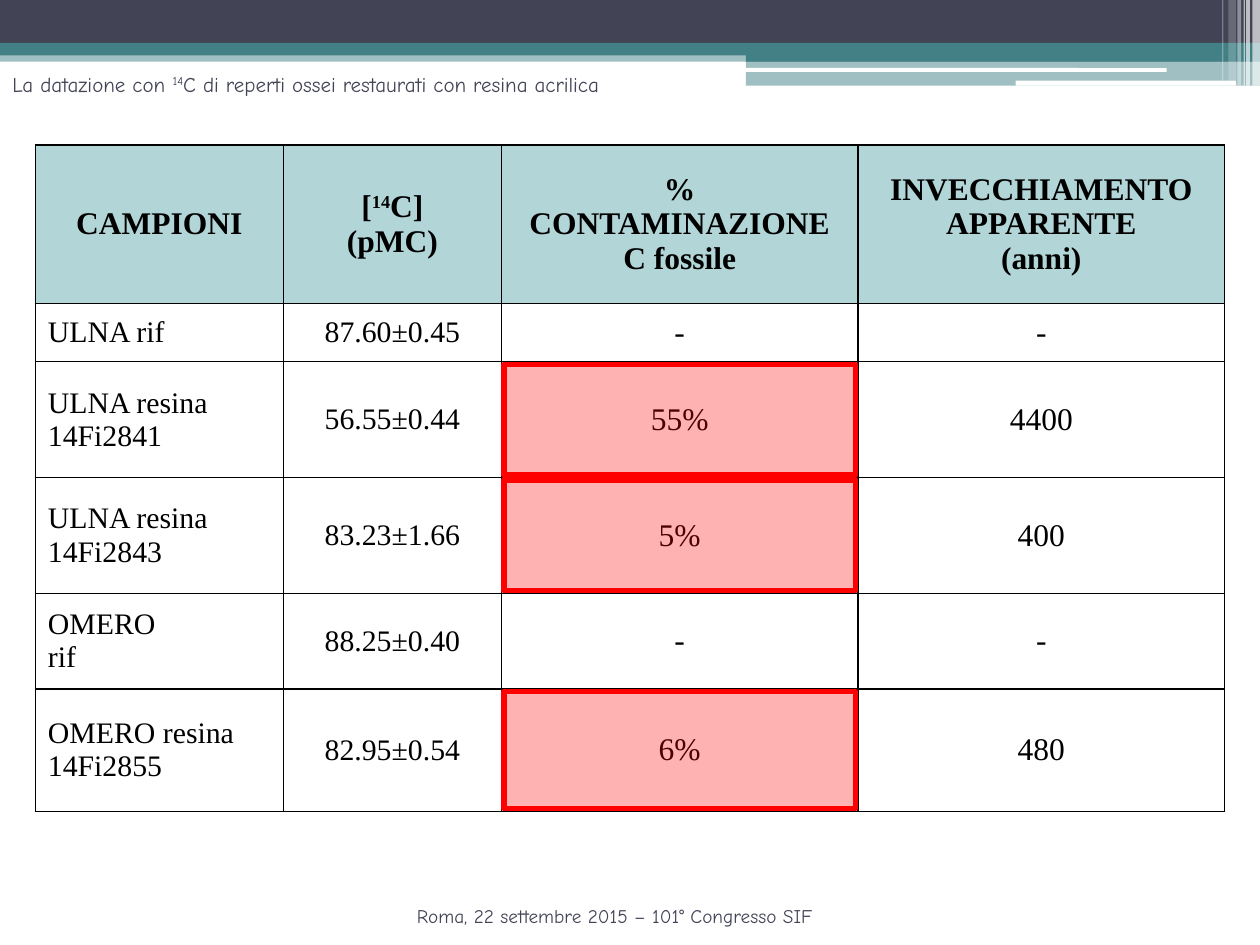
from lxml import etree
from pptx import Presentation
from pptx.dml.color import RGBColor
from pptx.enum.shapes import MSO_SHAPE as Shape
from pptx.enum.text import MSO_ANCHOR as Anchor, PP_ALIGN as Align
from pptx.oxml.ns import qn
from pptx.util import Inches, Pt

COLORS = {"slate": "424456", "teal": "438086", "header": "83BCC1",
          "white": "FFFFFF", "black": "000000", "red": "FF0000"}

# Banner parts: left, top, width, height, colour, opacity in percent
BANDS = [
    (0, 0.4, 10, 0.09, "teal", 50),
    (0, 0, 10, 0.34, "slate", 100),
    (0, 0.34, 10, 0.1, "teal", 100),
    (5.92, 0.39, 4.08, 0.1, "teal", 100),
    (5.92, 0.48, 4.08, 0.2, "teal", 50),
]
PILLS = [(5.91, 0.54, 3.35, 0.03), (8.06, 0.64, 1.75, 0.04)]
# Vertical stripes: left, width, height, opacity
STRIPES = [
    (9.94, 0.06, 0.68, 65), (9.89, 0.03, 0.68, 65), (9.87, 0.01, 0.68, 60),
    (9.82, 0.03, 0.68, 40), (9.75, 0.06, 0.64, 20), (9.7, 0.01, 0.64, 30),
]

# In all texts, ^ encloses a superscript and a line break starts a paragraph
TITLE = "La datazione con ^14^C di reperti ossei restaurati con resina acrilica"
FOOTER = "Roma, 22 settembre 2015 – 101° Congresso SIF"
ROWS = [
    ["CAMPIONI", "[^14^C]\n(pMC)", "% CONTAMINAZIONE\nC fossile",
     "INVECCHIAMENTO APPARENTE\n(anni)"],
    ["ULNA rif", "87.60±0.45", "-", "-"],
    ["ULNA resina\n14Fi2841", "56.55±0.44", "55%", "4400"],
    ["ULNA resina\n14Fi2843", "83.23±1.66", "5%", "400"],
    ["OMERO\nrif", "88.25±0.40", "-", "-"],
    ["OMERO resina\n14Fi2855", "82.95±0.54", "6%", "480"],
]
TABLE_LEFT, TABLE_TOP = 0.28, 1.15
COL_WIDTHS = [1.97, 1.73, 2.83, 2.91]
ROW_HEIGHTS = [1.26, 0.46, 0.92, 0.92, 0.76, 0.97]
MARKED_COL, MARKED_ROWS = 2, [2, 3, 5]
MARK_INSET = 0.02


def rgb(name):
    return RGBColor.from_string(COLORS[name])


def paint(fill, color, opacity=100):
    fill.solid()
    fill.fore_color.rgb = rgb(color)
    if opacity < 100:
        tag = fill._xPr.find(qn("a:solidFill")).find(qn("a:srgbClr"))
        etree.SubElement(tag, qn("a:alpha"), val=str(opacity * 1000))


def add_block(page, kind, left, top, width, height, color, opacity=100):
    block = page.shapes.add_shape(kind, Inches(left), Inches(top),
                                  Inches(width), Inches(height))
    block.shadow.inherit = False
    paint(block.fill, color, opacity)
    block.line.fill.background()
    return block


def write(frame, text, font, size, color, bold=False, align=Align.LEFT):
    for number, line in enumerate(text.split("\n")):
        para = frame.paragraphs[0] if number == 0 else frame.add_paragraph()
        para.alignment = align
        for part, piece in enumerate(line.split("^")):
            span = para.add_run()
            span.text = piece
            span.font.name, span.font.size = font, Pt(size)
            span.font.bold = bold
            span.font.color.rgb = rgb(color)
            if part % 2:
                span.font._element.set("baseline", "30000")


def add_text(page, left, top, width, height, text, size):
    box = page.shapes.add_textbox(Inches(left), Inches(top),
                                  Inches(width), Inches(height))
    box.text_frame.word_wrap = True
    box.text_frame.vertical_anchor = Anchor.MIDDLE
    write(box.text_frame, text, "Comic Neue", size, "slate")


def add_borders(cell):
    props = cell._tc.get_or_add_tcPr()
    for index, side in enumerate(("a:lnL", "a:lnR", "a:lnT", "a:lnB")):
        line = etree.Element(qn(side), w=str(Pt(1)))
        solid = etree.SubElement(line, qn("a:solidFill"))
        etree.SubElement(solid, qn("a:srgbClr"), val=COLORS["black"])
        props.insert(index, line)


def add_results(page):
    table = page.shapes.add_table(
        len(ROWS), len(COL_WIDTHS), Inches(TABLE_LEFT), Inches(TABLE_TOP),
        Inches(sum(COL_WIDTHS)), Inches(sum(ROW_HEIGHTS))).table
    table.horz_banding = False
    for column, width in zip(table.columns, COL_WIDTHS):
        column.width = Inches(width)
    for row, height in zip(table.rows, ROW_HEIGHTS):
        row.height = Inches(height)
    for r, texts in enumerate(ROWS):
        for c, text in enumerate(texts):
            cell = table.cell(r, c)
            cell.vertical_anchor = Anchor.MIDDLE
            header = r == 0
            if header:
                paint(cell.fill, "header", 62)
            elif c == 0:
                paint(cell.fill, "white")
            else:
                cell.fill.background()
            size = 18 if header or c >= 2 else 17
            align = Align.CENTER if header or c else Align.LEFT
            write(cell.text_frame, text, "Times New Roman", size, "black",
                  header, align)
            add_borders(cell)


def add_marks(page):
    left = TABLE_LEFT + sum(COL_WIDTHS[:MARKED_COL]) + MARK_INSET
    width = COL_WIDTHS[MARKED_COL] - 2 * MARK_INSET
    for row in MARKED_ROWS:
        top = TABLE_TOP + sum(ROW_HEIGHTS[:row]) + MARK_INSET
        height = ROW_HEIGHTS[row] - 2 * MARK_INSET
        mark = add_block(page, Shape.RECTANGLE, left, top, width, height,
                         "red", 30)
        mark.line.color.rgb = rgb("red")
        mark.line.width = Pt(3)


def main():
    deck = Presentation()
    deck.slide_width, deck.slide_height = Inches(10), Inches(7.5)
    page = deck.slides.add_slide(deck.slide_layouts[6])

    # Banner
    for band in BANDS:
        add_block(page, Shape.RECTANGLE, *band)
    for pill in PILLS:
        add_block(page, Shape.ROUNDED_RECTANGLE, *pill, "white")
    for left, width, height, opacity in STRIPES:
        add_block(page, Shape.RECTANGLE, left, 0, width, height, "white",
                  opacity)

    # Title and footer
    add_text(page, 0, 0.47, 5.94, 0.39, TITLE, 12)
    add_text(page, 3.21, 7.03, 3.59, 0.47, FOOTER, 11)

    # Results, with the contaminated samples marked
    add_results(page)
    add_marks(page)
    deck.save("out.pptx")


if __name__ == "__main__":
    main()
